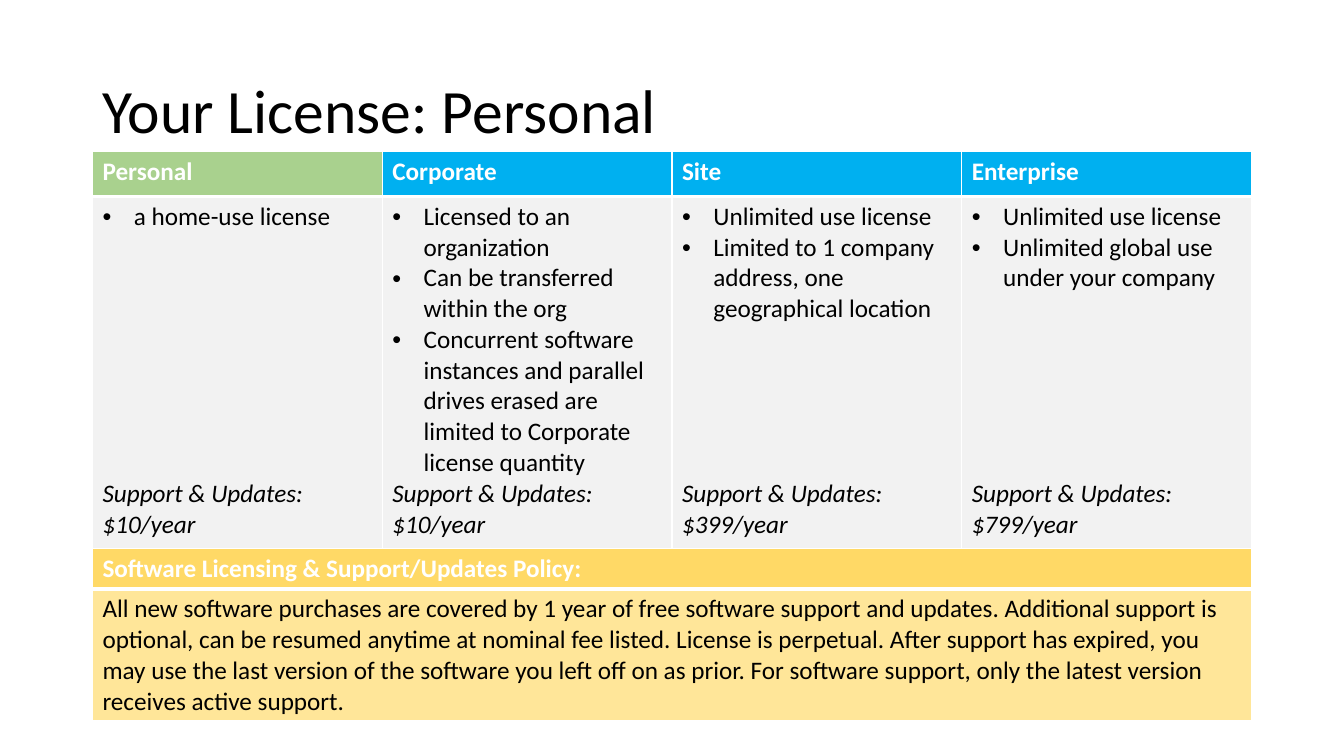
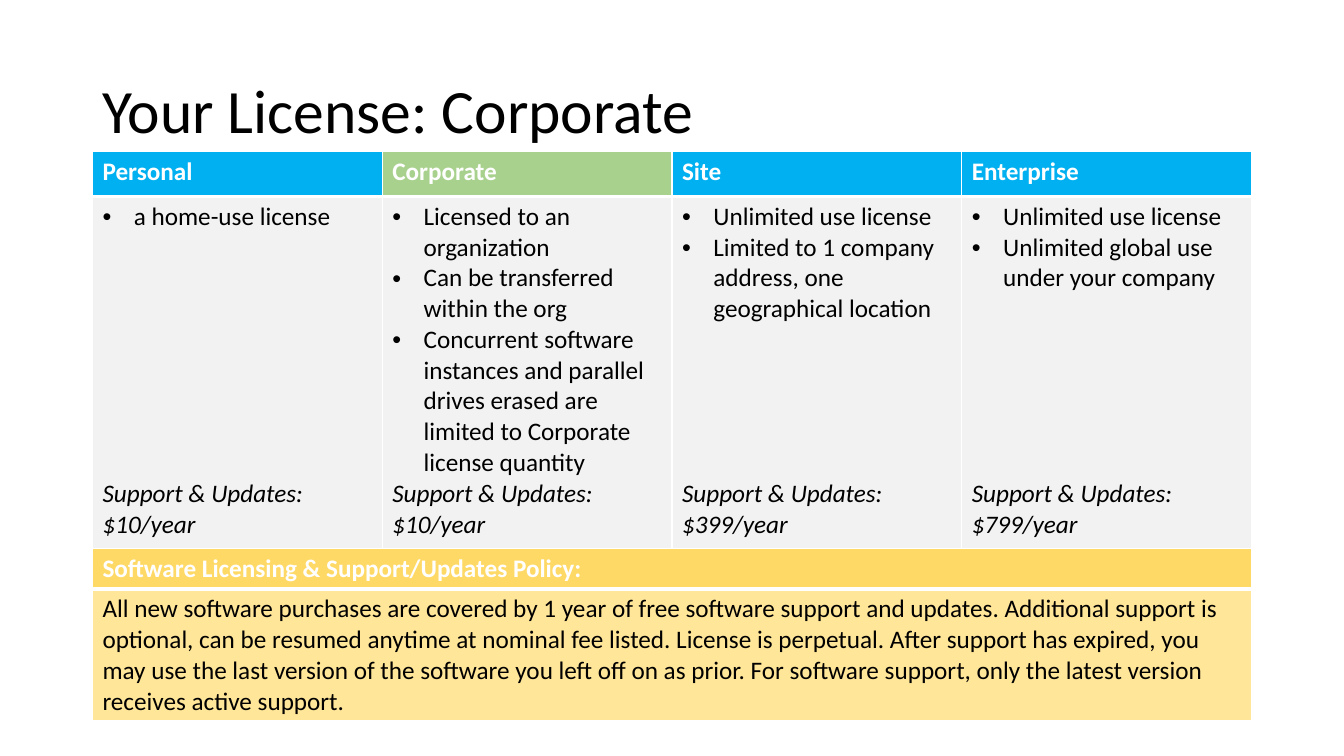
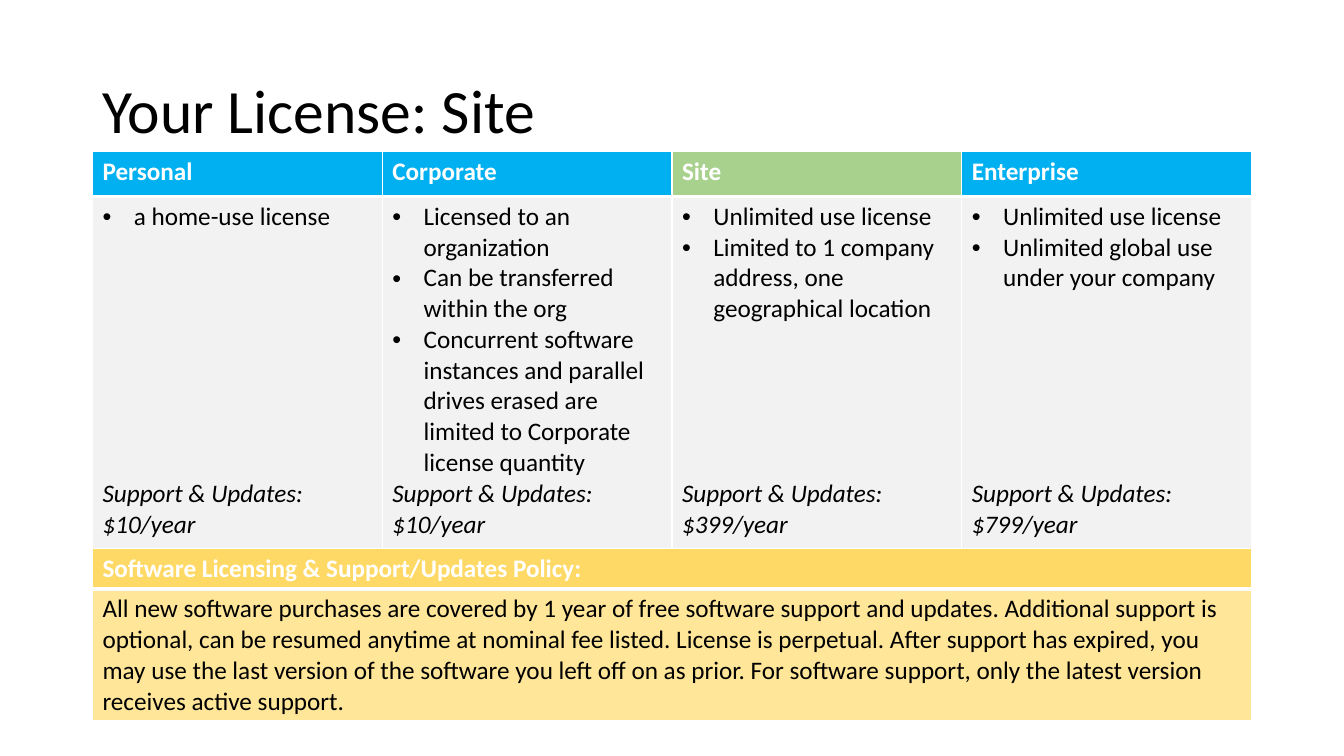
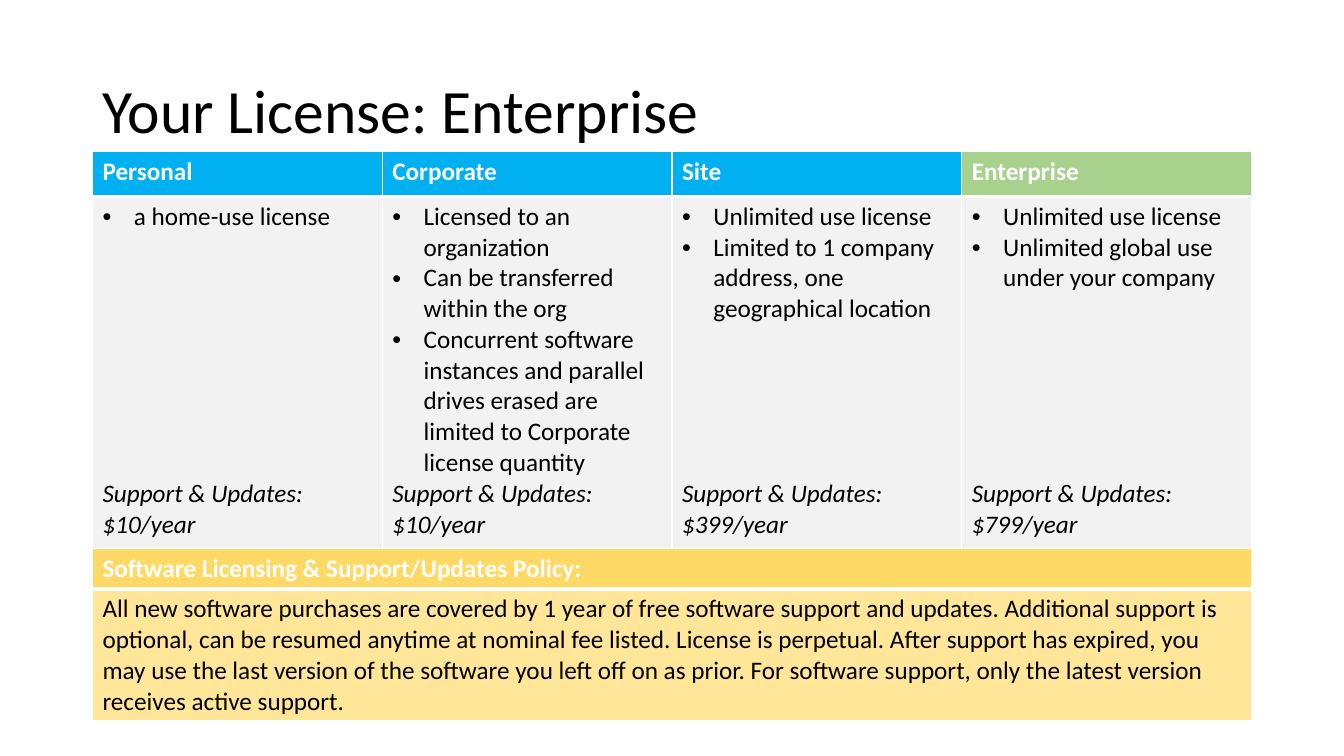
import pptx
import pptx.dml.color
import pptx.enum.text
import pptx.oxml
import pptx.oxml.ns
import pptx.util

Cm, Pt = pptx.util.Cm, pptx.util.Pt
RGBColor = pptx.dml.color.RGBColor

# Each licence: name, bullets, number of lines the bullets fill, yearly fee
LICENSES = [
    ("Personal", ["a home-use license"], 1, "$10"),
    ("Corporate", [
        "Licensed to an organization",
        "Can be transferred within the org",
        "Concurrent software instances and parallel drives erased are "
        "limited to Corporate license quantity",
    ], 9, "$10"),
    ("Site", [
        "Unlimited use license",
        "Limited to 1 company address, one geographical location",
    ], 4, "$399"),
    ("Enterprise", [
        "Unlimited use license",
        "Unlimited global use under your company",
    ], 3, "$799"),
]
POLICY_HEADING = "Software Licensing & Support/Updates Policy:"
POLICY = (
    "All new software purchases are covered by 1 year of free software support "
    "and updates. Additional support is optional, can be resumed anytime at "
    "nominal fee listed. License is perpetual. After support has expired, you "
    "may use the last version of the software you left off on as prior. For "
    "software support, only the latest version receives active support."
)

BLACK = RGBColor(0x00, 0x00, 0x00)
WHITE = RGBColor(0xFF, 0xFF, 0xFF)
BLUE = RGBColor(0x00, 0xB0, 0xF0)
GREEN = RGBColor(0xA9, 0xD1, 0x8E)
GRAY = RGBColor(0xF2, 0xF2, 0xF2)
GOLD = RGBColor(0xFF, 0xD9, 0x66)
PALE_GOLD = RGBColor(0xFF, 0xE6, 0x99)

FONT = "Calibri"
LEFT, WIDTH = Cm(2.33), Cm(29.21)
BULLET_INDENT = Cm(0.79)
LINE_PT = 21.97  # height of one 18 pt line
THIN, THICK = Pt(1), Pt(3)


def write(tf, text, size=18, color=BLACK, bold=False, italic=False,
          bullet=False, before=None, line_spacing=None):
    """Add a paragraph, filling the empty first one if there is one."""
    p = tf.paragraphs[0]
    if p.runs:
        p = tf.add_paragraph()
    if before is not None:
        p.space_before = Pt(before)
    if line_spacing is not None:
        p.line_spacing = line_spacing
    if bullet:
        pPr = p._p.get_or_add_pPr()
        pPr.set("marL", str(BULLET_INDENT))
        pPr.set("indent", str(-BULLET_INDENT))
        for tag, name, value in (("buFont", "typeface", "Arial"), ("buChar", "char", "•")):
            mark = pptx.oxml.ns.qn(f"a:{tag}")
            pPr.append(pPr.makeelement(mark, {name: value}))
    r = p.add_run()
    r.text = text
    r.font.name = FONT
    r.font.size = Pt(size)
    r.font.bold = bold
    r.font.italic = italic
    r.font.color.rgb = color


def style_cell(cell, fill, top=THIN, bottom=THIN):
    """Set the fill and white borders; borders must precede the fill in the XML."""
    cell.fill.solid()
    cell.fill.fore_color.rgb = fill
    tcPr = cell._tc.get_or_add_tcPr()
    borders = (("L", THIN), ("R", THIN), ("T", top), ("B", bottom))
    for i, (side, width) in enumerate(borders):
        tcPr.insert(i, pptx.oxml.parse_xml(
            f'<a:ln{side} {pptx.oxml.ns.nsdecls("a")} w="{width}">'
            f'<a:solidFill><a:srgbClr val="{WHITE}"/></a:solidFill></a:ln{side}>'))


def add_headed_table(slide, top, row_heights, header_fills, body_fill):
    """Add a table with a header row and one body row, and return it."""
    columns = len(header_fills)
    table = slide.shapes.add_table(
        2, columns, LEFT, top, WIDTH, sum(row_heights)).table
    table.horz_banding = False
    for row, height in zip(table.rows, row_heights):
        row.height = height
    for c, fill in enumerate(header_fills):
        table.columns[c].width = WIDTH // columns
        style_cell(table.cell(0, c), fill, bottom=THICK)
        style_cell(table.cell(1, c), body_fill, top=THICK)
    return table


def add_title(slide, text):
    tf = slide.shapes.add_textbox(LEFT, Cm(1.02), WIDTH, Cm(3.68)).text_frame
    tf.word_wrap = True
    tf.vertical_anchor = pptx.enum.text.MSO_ANCHOR.MIDDLE
    write(tf, text, size=44, line_spacing=0.9)


def add_license_table(slide, current):
    fills = [GREEN if name == current else BLUE for name, *_ in LICENSES]
    table = add_headed_table(slide, Cm(3.81), (Cm(1.14), Cm(10.54)), fills, GRAY)
    most_lines = max(lines for _, _, lines, _ in LICENSES)
    for c, (name, bullets, lines, fee) in enumerate(LICENSES):
        write(table.cell(0, c).text_frame, name, color=WHITE, bold=True)
        tf = table.cell(1, c).text_frame
        for bullet in bullets:
            write(tf, bullet, bullet=True)
        write(tf, f"Support & Updates: {fee}/year", italic=True,
              before=(most_lines - lines) * LINE_PT)


def add_policy_table(slide):
    table = add_headed_table(slide, Cm(13.82), (Cm(0.99), Cm(3.33)), [GOLD], PALE_GOLD)
    write(table.cell(0, 0).text_frame, POLICY_HEADING, color=WHITE, bold=True)
    write(table.cell(1, 0).text_frame, POLICY)


def main():
    prs = pptx.Presentation()
    prs.slide_width, prs.slide_height = Cm(33.87), Cm(19.05)
    for name, *_ in LICENSES:
        slide = prs.slides.add_slide(prs.slide_layouts[6])
        add_title(slide, f"Your License: {name}")
        add_license_table(slide, name)
        add_policy_table(slide)
    prs.save("out.pptx")


if __name__ == "__main__":
    main()
